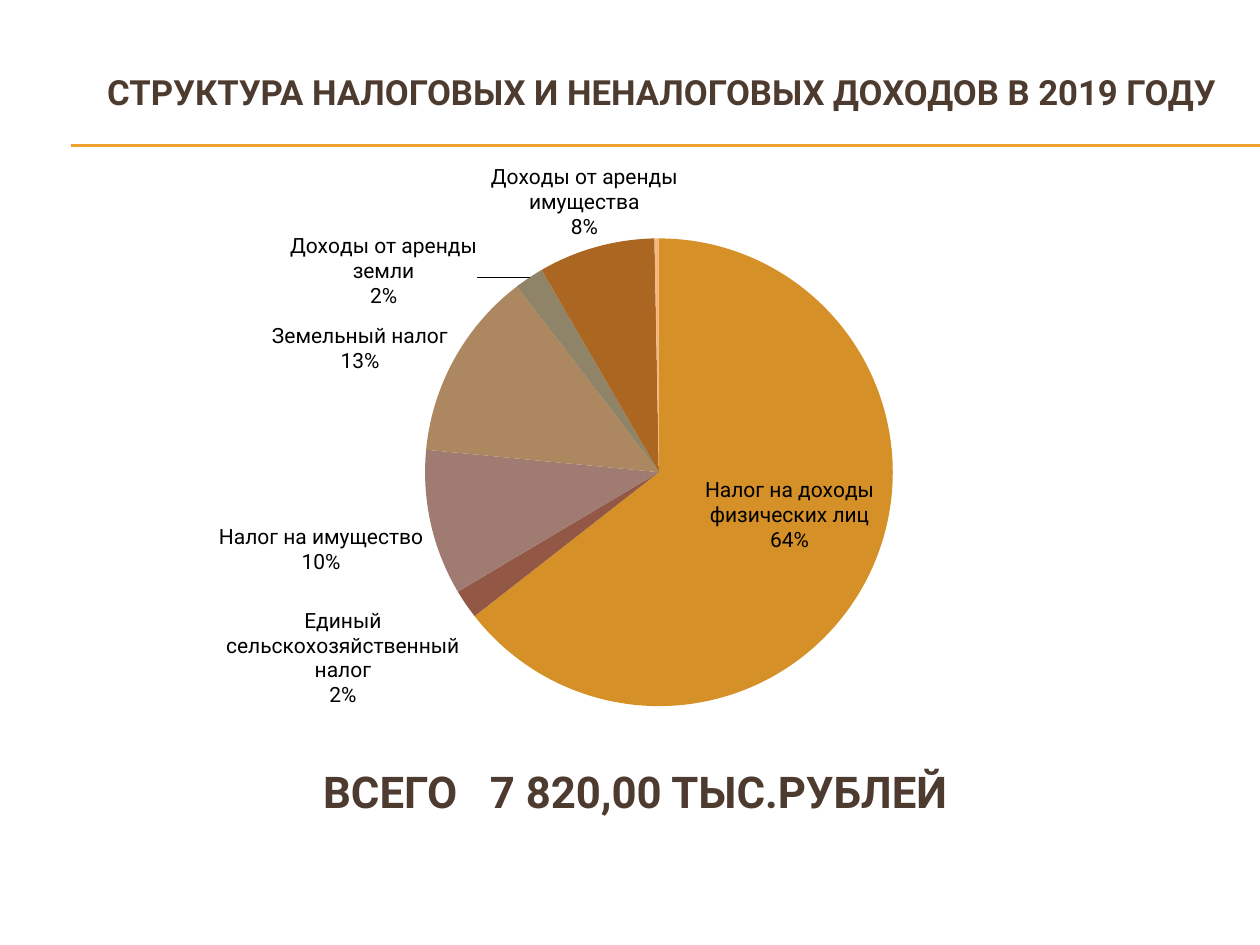
from dataclasses import dataclass

from lxml import etree
from pptx import Presentation
from pptx.chart.data import CategoryChartData
from pptx.dml.color import RGBColor
from pptx.enum.chart import XL_CHART_TYPE, XL_LABEL_POSITION
from pptx.enum.shapes import MSO_CONNECTOR
from pptx.enum.text import MSO_ANCHOR, PP_ALIGN
from pptx.oxml import parse_xml
from pptx.oxml.ns import nsdecls, qn
from pptx.util import Inches, Pt

PIE = XL_CHART_TYPE.PIE
INSIDE = XL_LABEL_POSITION.INSIDE_END
OUTSIDE = XL_LABEL_POSITION.OUTSIDE_END
STRAIGHT = MSO_CONNECTOR.STRAIGHT
CENTER = PP_ALIGN.CENTER
BOTTOM = MSO_ANCHOR.BOTTOM

FONT = "Roboto"
COLORS = {
    "text": "4E3B30",
    "rule": "F0A22E",
    "label": "000000",
    "income": "D59128",
    "farm": "925845",
    "property": "A07B71",
    "land": "AD8760",
    "land_rent": "8F8468",
    "property_rent": "AB6722",
    "remainder": "F4B77F",
}


@dataclass
class Slice:
    name: str
    value: float
    color: str
    position: XL_LABEL_POSITION = OUTSIDE
    offset: tuple[float, float] | None = None


@dataclass
class Rule:
    y: float
    left: float = 0.56
    right: float = 10


SLICES = [
    Slice("Налог на доходы физических лиц", 64, "income", INSIDE, (0.01, -0.03)),
    Slice("Единый сельскохозяйственный налог", 2, "farm"),
    Slice("Налог на имущество", 10, "property"),
    Slice("Земельный налог", 13, "land", offset=(0, 0.03)),
    Slice("Доходы от аренды земли", 2, "land_rent", offset=(-0.04, 0.06)),
    Slice("Доходы от аренды имущества", 8, "property_rent", offset=(0.07, 0)),
    Slice("", 0.3, "remainder"),
]
RULES = [Rule(1.15), Rule(1.16)]


def rgb(name: str) -> RGBColor:
    return RGBColor.from_string(COLORS[name])


def style(font, size: float, color: str, bold: bool = False) -> None:
    font.name, font.size, font.bold = FONT, Pt(size), bold
    font.color.rgb = rgb(color)


def set_text(tf, text: str, size: float) -> None:
    tf.text = text
    tf.word_wrap = True
    p = tf.paragraphs[0]
    p.alignment = CENTER
    style(p.runs[0].font, size, "text", True)


def draw_rule(s, rule: Rule) -> None:
    line = s.shapes.add_connector(
        STRAIGHT, Inches(rule.left), Inches(rule.y), Inches(rule.right), Inches(rule.y))
    line.line.color.rgb = rgb("rule")
    line.line.width = Pt(0.75)
    etree.SubElement(line._element.spPr, qn("a:effectLst"))


def manual_layout(x: float, y: float, w: float | None = None, h: float | None = None):
    parts = [("x", x), ("y", y)]
    if w is not None:
        parts = [("layoutTarget", "inner"), ("xMode", "edge"), ("yMode", "edge"),
                 *parts, ("w", w), ("h", h)]
    body = "".join(f'<c:{tag} val="{val}"/>' for tag, val in parts)
    return parse_xml(f'<c:layout {nsdecls("c")}><c:manualLayout>{body}'
                     '</c:manualLayout></c:layout>')


def show_name_and_percent(label, shown: bool) -> None:
    flag = "1" if shown else "0"
    for tag, val in (("showVal", "0"), ("showCatName", flag), ("showPercent", flag)):
        label.find(qn(f"c:{tag}")).set("val", val)
    separator = etree.Element(qn("c:separator"))
    separator.text = "\n"
    last = label.find(qn("c:showBubbleSize"))
    if last is None:
        last = label.find(qn("c:showPercent"))
    last.addnext(separator)


def draw_slice(series, index: int, item: Slice) -> None:
    point = series.points[index]
    point.format.fill.solid()
    point.format.fill.fore_color.rgb = rgb(item.color)
    point.format.line.fill.background()
    style(point.data_label.font, 12, "label")
    point.data_label.position = item.position
    label = series._element.xpath(f'c:dLbls/c:dLbl[c:idx/@val="{index}"]')[0]
    show_name_and_percent(label, bool(item.name))
    if item.offset:
        label.find(qn("c:idx")).addnext(manual_layout(*item.offset))


def draw_pie(s, slices: list[Slice]) -> None:
    data = CategoryChartData()
    data.categories = [item.name for item in slices]
    data.add_series("", [item.value for item in slices])
    chart = s.shapes.add_chart(
        PIE, Inches(0.29), Inches(1.15), Inches(9.5), Inches(4.95), data).chart
    chart.has_legend = False
    chart.has_title = False
    style(chart.font, 10, "label")
    plot = chart.plots[0]
    plot.vary_by_categories = True
    area = chart._chartSpace.chart.plotArea
    for old in area.findall(qn("c:layout")):
        area.remove(old)
    area.insert(0, manual_layout(0.32, 0.15, 0.4, 0.75))
    series = plot.series[0]
    labels = series.data_labels
    labels.show_value = False
    labels.show_category_name = True
    labels.show_percentage = True
    style(labels.font, 12, "label")
    for index, item in enumerate(slices):
        draw_slice(series, index, item)


def main() -> None:
    prs = Presentation()
    prs.slide_width, prs.slide_height = Inches(10), Inches(7.5)
    s = prs.slides.add_slide(prs.slide_layouts[5])

    for rule in RULES:
        draw_rule(s, rule)

    title = s.shapes.title
    title.left, title.top = Inches(0.5), Inches(0)
    title.width, title.height = Inches(9.5), Inches(0.92)
    tf = title.text_frame
    set_text(tf, "СТРУКТУРА НАЛОГОВЫХ И НЕНАЛОГОВЫХ ДОХОДОВ В 2019 ГОДУ", 19.8)
    tf.vertical_anchor = BOTTOM
    tf.margin_bottom = Inches(0.03)

    total = s.shapes.add_textbox(Inches(2.03), Inches(6.02), Inches(6.02), Inches(0.52))
    set_text(total.text_frame, "ВСЕГО   7 820,00 ТЫС.РУБЛЕЙ", 25)

    draw_pie(s, SLICES)
    prs.save("out.pptx")


if __name__ == "__main__":
    main()
